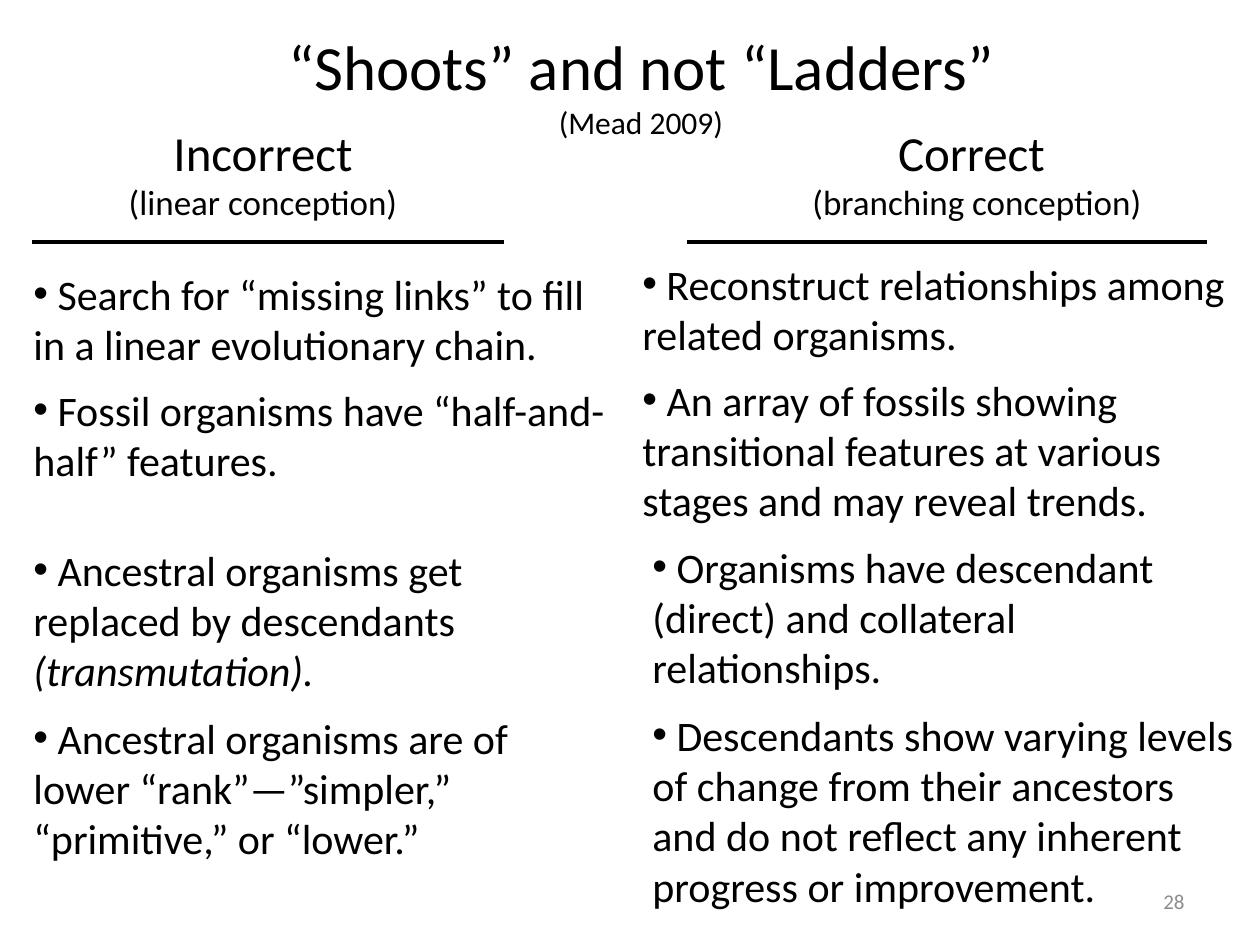
from lxml import etree
from pptx import Presentation
from pptx import util as u
from pptx.dml.color import RGBColor
from pptx.enum import shapes, text
from pptx.oxml import ns

PX_PER_INCH = 126
FONT = "Calibri"
BLACK = RGBColor(0x00, 0x00, 0x00)
GRAY = RGBColor(0x8C, 0x8C, 0x8C)

# Each column: heading box, rule, and points as (box, plain text, italic ending).
COLUMNS = [
    {
        "heading": ("Incorrect", "(linear conception)"),
        "heading_box": (32, 116, 462, 115),
        "rule": (32, 504),
        "points": [
            ((21, 262, 599, 115), "Search for “missing links” to fill in a linear evolutionary chain.", ""),
            ((21, 378, 599, 115), "Fossil organisms have “half-and-half” features.", ""),
            ((21, 538, 599, 165), "Ancestral organisms get replaced by descendants ", "(transmutation)."),
            ((21, 706, 599, 165), "Ancestral organisms are of lower “rank”—”simpler,” “primitive,” or “lower.”", ""),
        ],
    },
    {
        "heading": ("Correct ", "(branching conception)"),
        "heading_box": (725, 116, 504, 115),
        "rule": (687, 1207),
        "points": [
            ((630, 252, 630, 115), "Reconstruct relationships among related organisms.", ""),
            ((630, 368, 599, 165), "An array of fossils showing transitional features at various stages "
                                   "and may reveal trends.", ""),
            ((640, 535, 620, 165), "Organisms have descendant (direct) and collateral relationships.", ""),
            ((640, 703, 620, 217), "Descendants show varying levels of change from their ancestors "
                                   "and do not reflect any inherent progress or improvement.", ""),
        ],
    },
]
RULE_TOP = 242


def px(length):
    return u.Emu(round(length * 914400 / PX_PER_INCH))


def add_span(para, words, size, color=BLACK, italic=None):
    span = para.add_run()
    span.text = words
    span.font.name = FONT
    span.font.size = u.Pt(size)
    span.font.color.rgb = color
    span.font.italic = italic


def add_box(page, box):
    frame = page.shapes.add_textbox(*map(px, box)).text_frame
    frame.word_wrap = True
    return frame


def add_title(page, box):
    title = page.shapes.title
    title.left, title.top, title.width, title.height = map(px, box)
    frame = title.text_frame
    frame.auto_size = text.MSO_AUTO_SIZE.NONE
    frame.vertical_anchor = text.MSO_ANCHOR.TOP
    para = frame.paragraphs[0]
    para.alignment = text.PP_ALIGN.CENTER
    add_span(para, "“Shoots” and not “Ladders” ", 36)
    add_span(para, "(Mead 2009)", 18)


def add_heading(page, box, lines):
    frame = add_box(page, box)
    for para, words, size in zip((frame.paragraphs[0], frame.add_paragraph()), lines, (28, 20)):
        para.alignment = text.PP_ALIGN.CENTER
        add_span(para, words, size)


def add_rule(page, start, end):
    rule = page.shapes.add_connector(
        shapes.MSO_CONNECTOR.STRAIGHT, px(start), px(RULE_TOP), px(end), px(RULE_TOP))
    rule.line.color.rgb = BLACK
    rule.line.width = u.Pt(2.5)
    etree.SubElement(rule._element.spPr, ns.qn("a:effectLst"))


def add_point(page, box, words, italic_ending):
    para = add_box(page, box).paragraphs[0]
    properties = para._p.get_or_add_pPr()
    etree.SubElement(properties, ns.qn("a:buFont")).set("typeface", "Arial")
    etree.SubElement(properties, ns.qn("a:buChar")).set("char", "•")
    add_span(para, " " + words, 24)
    if italic_ending:
        add_span(para, italic_ending, 24, italic=True)


def add_column(page, column):
    add_heading(page, column["heading_box"], column["heading"])
    add_rule(page, *column["rule"])
    for box, words, italic_ending in column["points"]:
        add_point(page, box, words, italic_ending)


def add_page_number(page, box):
    frame = add_box(page, box)
    frame.vertical_anchor = text.MSO_ANCHOR.MIDDLE
    para = frame.paragraphs[0]
    para.alignment = text.PP_ALIGN.RIGHT
    add_span(para, "28", 12, GRAY)


def main():
    deck = Presentation()
    deck.slide_width, deck.slide_height = px(1260), px(945)
    page = deck.slides.add_slide(deck.slide_layouts.get_by_name("Title Only"))
    add_title(page, (242, 21, 798, 127))
    for column in COLUMNS:
        add_column(page, column)
    add_page_number(page, (903, 876, 294, 50))
    deck.save("out.pptx")


if __name__ == "__main__":
    main()
